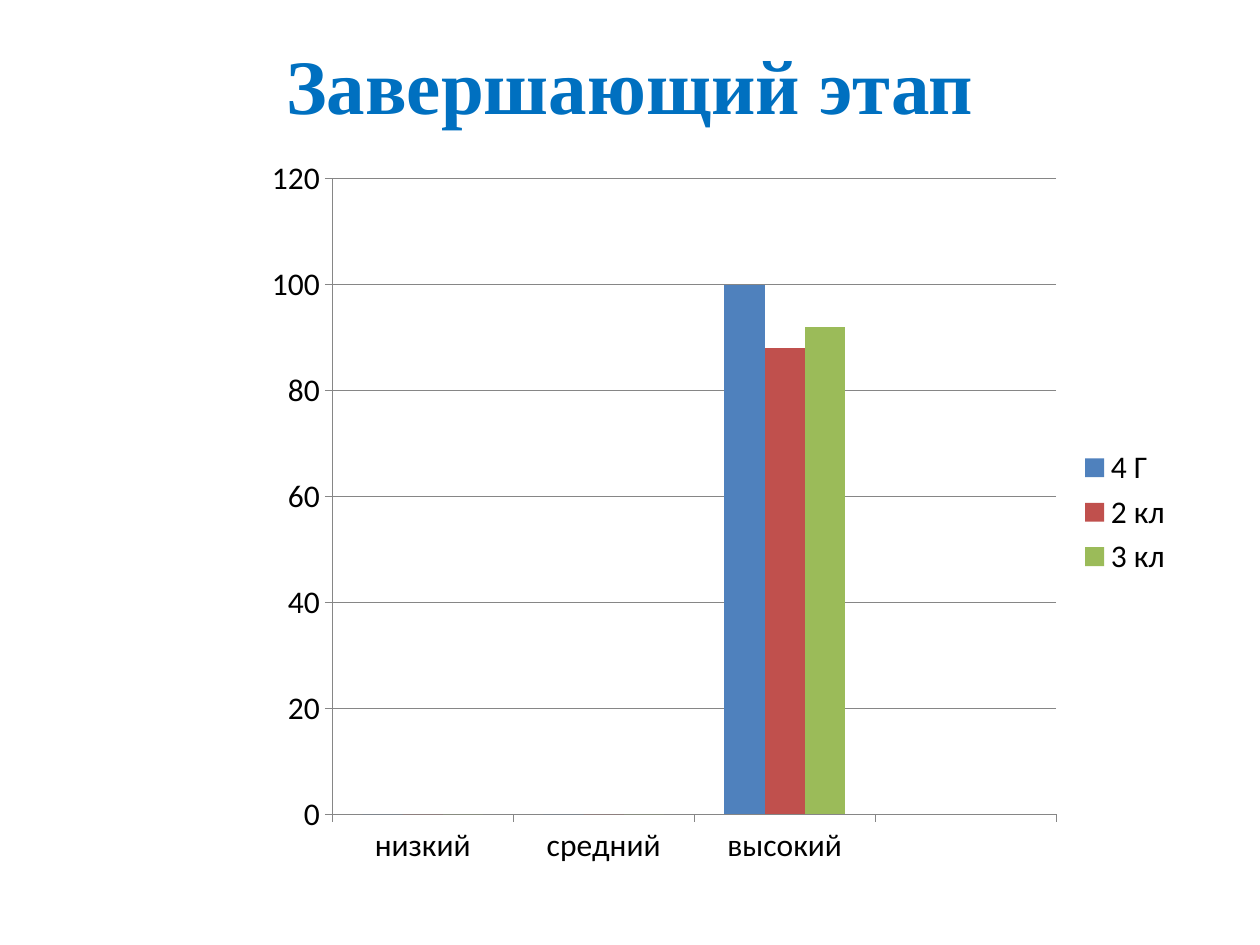
import pptx
import pptx.chart.data
import pptx.dml.color
import pptx.enum.chart
import pptx.enum.text
import pptx.util

Pt = pptx.util.Pt
RGB = pptx.dml.color.RGBColor.from_string
ENUM = pptx.enum.chart

THEME = {
    "title": {"name": "Times New Roman", "size": Pt(44), "bold": True},
    "chart": {"name": "Calibri", "size": Pt(18), "bold": False},
    "blue": RGB("0070C0"),
    "black": RGB("000000"),
    "grid": RGB("868686"),
    "bars": [RGB("4F81BD"), RGB("C0504D"), RGB("9BBB59")],
}
LEVELS = ["низкий", "средний", "высокий", ""]
SCORES = {
    "4 Г": [0, 0, 100, None],
    "2 кл": [0, 0, 88, None],
    "3 кл": [0, 0, 92, None],
}


def assign(obj, vals):
    """Set each named value on an object."""
    for key, val in vals.items():
        setattr(obj, key, val)


def style(font, vals, color):
    """Format a font with the given values and colour."""
    assign(font, vals)
    font.color.rgb = color


def stroke(line):
    """Draw a line in the grid colour."""
    assign(line, {"width": Pt(0.75)})
    line.color.rgb = THEME["grid"]


def add_title(slide, box, text):
    """Place the heading at the top of its box."""
    title = slide.shapes.title
    assign(title, dict(zip(("left", "top", "width", "height"), map(Pt, box))))
    frame = title.text_frame
    assign(frame, {
        "text": text,
        "word_wrap": True,
        "margin_top": Pt(0),
        "auto_size": pptx.enum.text.MSO_AUTO_SIZE.NONE,
        "vertical_anchor": pptx.enum.text.MSO_ANCHOR.TOP,
    })
    para = frame.paragraphs[0]
    para.alignment = pptx.enum.text.PP_ALIGN.CENTER
    style(para.runs[0].font, THEME["title"], THEME["blue"])


def add_scores(slide, box):
    """Place the column chart of levels by class."""
    data = pptx.chart.data.CategoryChartData()
    data.categories = LEVELS
    for name, vals in SCORES.items():
        data.add_series(name, vals)
    frame = slide.shapes.add_chart(
        ENUM.XL_CHART_TYPE.COLUMN_CLUSTERED, *map(Pt, box), data)
    chart = frame.chart
    assign(chart, {"has_title": False, "has_legend": True})
    style(chart.font, THEME["chart"], THEME["black"])
    assign(chart.legend, {
        "position": ENUM.XL_LEGEND_POSITION.RIGHT,
        "include_in_layout": False,
    })
    plot = chart.plots[0]
    assign(plot, {"gap_width": 150, "overlap": 0, "vary_by_categories": False})
    for bar, color in zip(plot.series, THEME["bars"]):
        bar.format.fill.solid()
        bar.format.fill.fore_color.rgb = color
    for axis in (chart.category_axis, chart.value_axis):
        axis.major_tick_mark = ENUM.XL_TICK_MARK.OUTSIDE
        stroke(axis.format.line)
    assign(chart.value_axis, {
        "minimum_scale": 0,
        "maximum_scale": 120,
        "major_unit": 20,
        "has_major_gridlines": True,
    })
    stroke(chart.value_axis.major_gridlines.format.line)


def main():
    """Build and save the slide."""
    deck = pptx.Presentation()
    assign(deck, {"slide_width": Pt(720), "slide_height": Pt(540)})
    slide = deck.slides.add_slide(deck.slide_layouts[5])
    add_title(slide, (36, 21.6, 648, 90), "Завершающий этап")
    add_scores(slide, (144.7, 82.8, 532.8, 419.8))
    deck.save("out.pptx")


if __name__ == "__main__":
    main()
